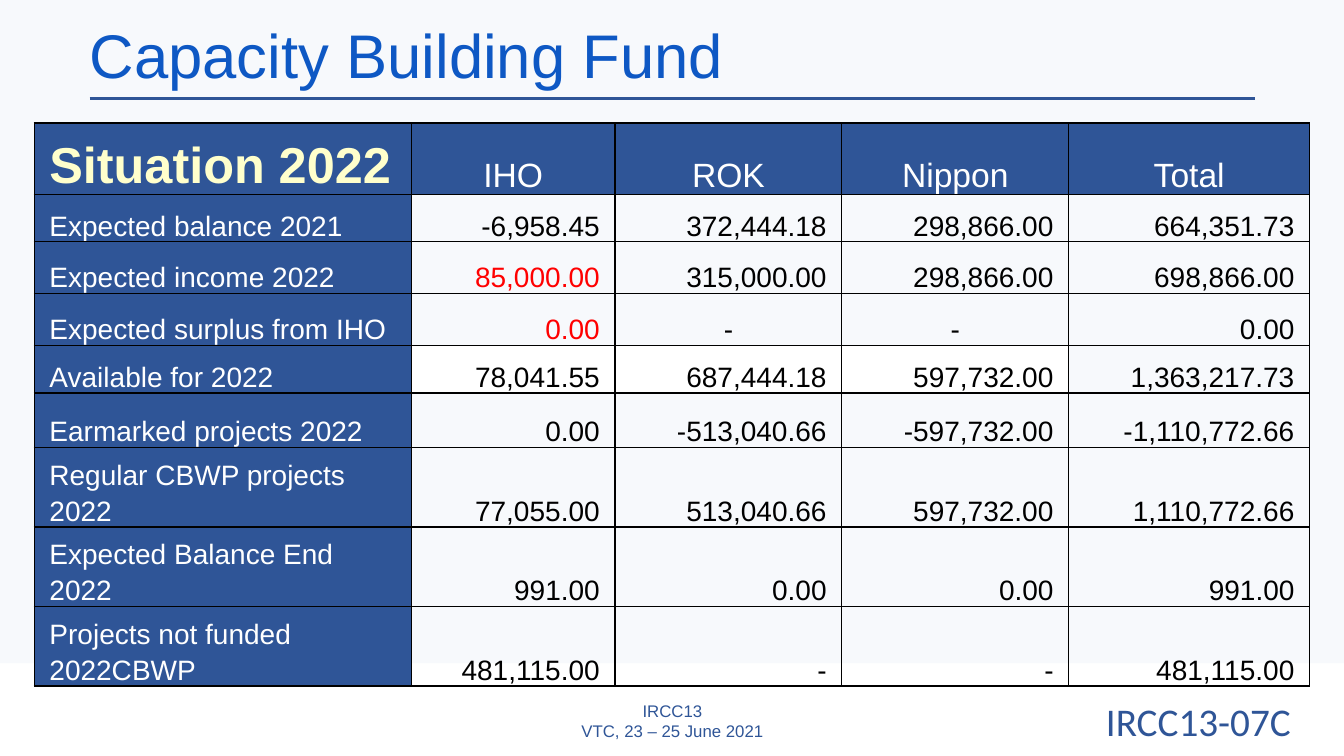
from lxml import etree
from pptx import Presentation
from pptx.dml.color import RGBColor
from pptx.enum.shapes import MSO_CONNECTOR, MSO_SHAPE
from pptx.enum.text import MSO_ANCHOR as ANCHOR, PP_ALIGN as ALIGN
from pptx.oxml import parse_xml
from pptx.oxml.ns import nsdecls, qn
from pptx.util import Inches, Pt

NAVY = RGBColor(0x2F, 0x55, 0x97)
BLUE = RGBColor(0x0E, 0x58, 0xC4)
PALE = RGBColor(0xDA, 0xE3, 0xF3)
CREAM = RGBColor(0xFF, 0xFF, 0xCC)
WHITE = RGBColor(0xFF, 0xFF, 0xFF)
BLACK = RGBColor(0, 0, 0)
RED = RGBColor(0xFF, 0, 0)

COL_WIDTHS = [3.74, 2.02, 2.25, 2.25, 2.39]
ROW_HEIGHTS = [0.71, 0.47, 0.51, 0.52, 0.47, 0.54, 0.79, 0.79, 0.78]
FUND = [
    ["Situation 2022", "IHO", "ROK", "Nippon", "Total"],
    ["Expected balance 2021", "-6,958.45", "372,444.18", "298,866.00", "664,351.73"],
    ["Expected income 2022", "85,000.00", "315,000.00", "298,866.00", "698,866.00"],
    ["Expected surplus from IHO", "0.00", "-", "-", "0.00"],
    ["Available for 2022", "78,041.55", "687,444.18", "597,732.00", "1,363,217.73"],
    ["Earmarked projects 2022", "0.00", "-513,040.66", "-597,732.00", "-1,110,772.66"],
    ["Regular CBWP projects 2022", "77,055.00", "513,040.66", "597,732.00", "1,110,772.66"],
    ["Expected Balance End 2022", "991.00", "0.00", "0.00", "991.00"],
    ["Projects not funded 2022CBWP", "481,115.00", "-", "-", "481,115.00"],
]
RED_CELLS = {(2, 1), (3, 1)}
CENTRED_CELLS = {(3, 2), (3, 3)}
WHITE_CELLS = {(4, 1), (4, 2), (4, 3)}


class FundSlide:
    """Holds the slide and its style, and adds each kind of element."""

    font = {"name": "Arial", "bold": False}
    cell_format = {
        "vertical_anchor": ANCHOR.BOTTOM,
        "margin_left": Inches(0.15),
        "margin_right": Inches(0.15),
        "margin_top": Inches(0.02),
        "margin_bottom": 0,
    }

    def __init__(self, prs):
        self.s = prs.slides.add_slide(prs.slide_layouts[5])

    def fill_text(self, tf, text, color, align=ALIGN.LEFT, spacing=1.0, **font):
        p = tf.paragraphs[0]
        p.text = text
        p.alignment = align
        p.line_spacing = spacing
        for r in p.runs:
            for key, value in {**self.font, **font}.items():
                setattr(r.font, key, value)
            r.font.color.rgb = color

    def title(self, text, box):
        sp = self.s.shapes.title
        sp.left, sp.top, sp.width, sp.height = map(Inches, box)
        sp.text_frame.vertical_anchor = ANCHOR.MIDDLE
        self.fill_text(sp.text_frame, text, BLUE, spacing=0.9, size=Pt(44))

    def text(self, text, box, anchor, **font):
        tf = self.s.shapes.add_textbox(*map(Inches, box)).text_frame
        tf.word_wrap = True
        tf.vertical_anchor = anchor
        self.fill_text(tf, text, NAVY, ALIGN.CENTER, **font)

    def backdrop(self, box, color, opacity):
        sp = self.s.shapes.add_shape(MSO_SHAPE.RECTANGLE, *map(Inches, box))
        sp.shadow.inherit = False
        sp.fill.solid()
        sp.fill.fore_color.rgb = color
        sp.line.fill.background()
        rgb = sp.element.spPr.find(".//" + qn("a:srgbClr"))
        etree.SubElement(rgb, qn("a:alpha"), val=str(opacity * 1000))
        self.s.shapes.title.element.addprevious(sp.element)

    def rule(self, x1, x2, y):
        ends = map(Inches, (x1, y, x2, y))
        line = self.s.shapes.add_connector(MSO_CONNECTOR.STRAIGHT, *ends)
        line.line.color.rgb = NAVY
        line.line.width = Pt(2.25)
        etree.SubElement(line.element.spPr, qn("a:effectLst"))

    def border(self, cell):
        tc_pr = cell._tc.get_or_add_tcPr()
        for i, side in enumerate("LRTB"):
            tc_pr.insert(i, parse_xml(
                f'<a:ln{side} {nsdecls("a")} w="{Pt(1)}"><a:solidFill>'
                f'<a:srgbClr val="{BLACK}"/></a:solidFill></a:ln{side}>'))

    def cell(self, cell, text, row, col):
        for key, value in self.cell_format.items():
            setattr(cell, key, value)
        heading = row == 0 or col == 0
        if heading or (row, col) in WHITE_CELLS:
            cell.fill.solid()
            cell.fill.fore_color.rgb = NAVY if heading else WHITE
        else:
            cell.fill.background()
        self.border(cell)
        color, align, size = BLACK, ALIGN.RIGHT, 20
        if (row, col) == (0, 0):
            color, align, size = CREAM, ALIGN.LEFT, 36
        elif row == 0:
            color, align, size = WHITE, ALIGN.CENTER, 24
        elif col == 0:
            color, align = WHITE, ALIGN.LEFT
        elif (row, col) in RED_CELLS:
            color = RED
        elif (row, col) in CENTRED_CELLS:
            align = ALIGN.CENTER
        self.fill_text(cell.text_frame, text, color, align, 1.15,
                       size=Pt(size), bold=size == 36)

    def table(self, rows, left, top):
        size = sum(COL_WIDTHS), sum(ROW_HEIGHTS)
        tbl = self.s.shapes.add_table(
            len(rows), len(rows[0]), *map(Inches, (left, top, *size))).table
        tbl.first_row = tbl.horz_banding = False
        for column, width in zip(tbl.columns, COL_WIDTHS):
            column.width = Inches(width)
        for row, height in zip(tbl.rows, ROW_HEIGHTS):
            row.height = Inches(height)
        for i, row in enumerate(rows):
            for j, text in enumerate(row):
                self.cell(tbl.cell(i, j), text, i, j)


def main():
    prs = Presentation()
    prs.slide_width, prs.slide_height = Inches(13.33), Inches(7.5)
    slide = FundSlide(prs)
    slide.backdrop((0, 0, 13.33, 6.58), PALE, 21)
    slide.title("Capacity Building Fund", (0.79, -0.14, 11.5, 1.45))
    slide.rule(0.89, 12.45, 0.98)
    slide.text("IRCC13\nVTC, 23 – 25 June 2021", (4.42, 6.95, 4.5, 0.4),
               ANCHOR.MIDDLE, size=Pt(12))
    slide.text("IRCC13-07C", (10.47, 6.87, 2.83, 0.57),
               ANCHOR.TOP, size=Pt(28), name="Calibri")
    slide.table(FUND, 0.34, 1.22)
    prs.save("out.pptx")


if __name__ == "__main__":
    main()
